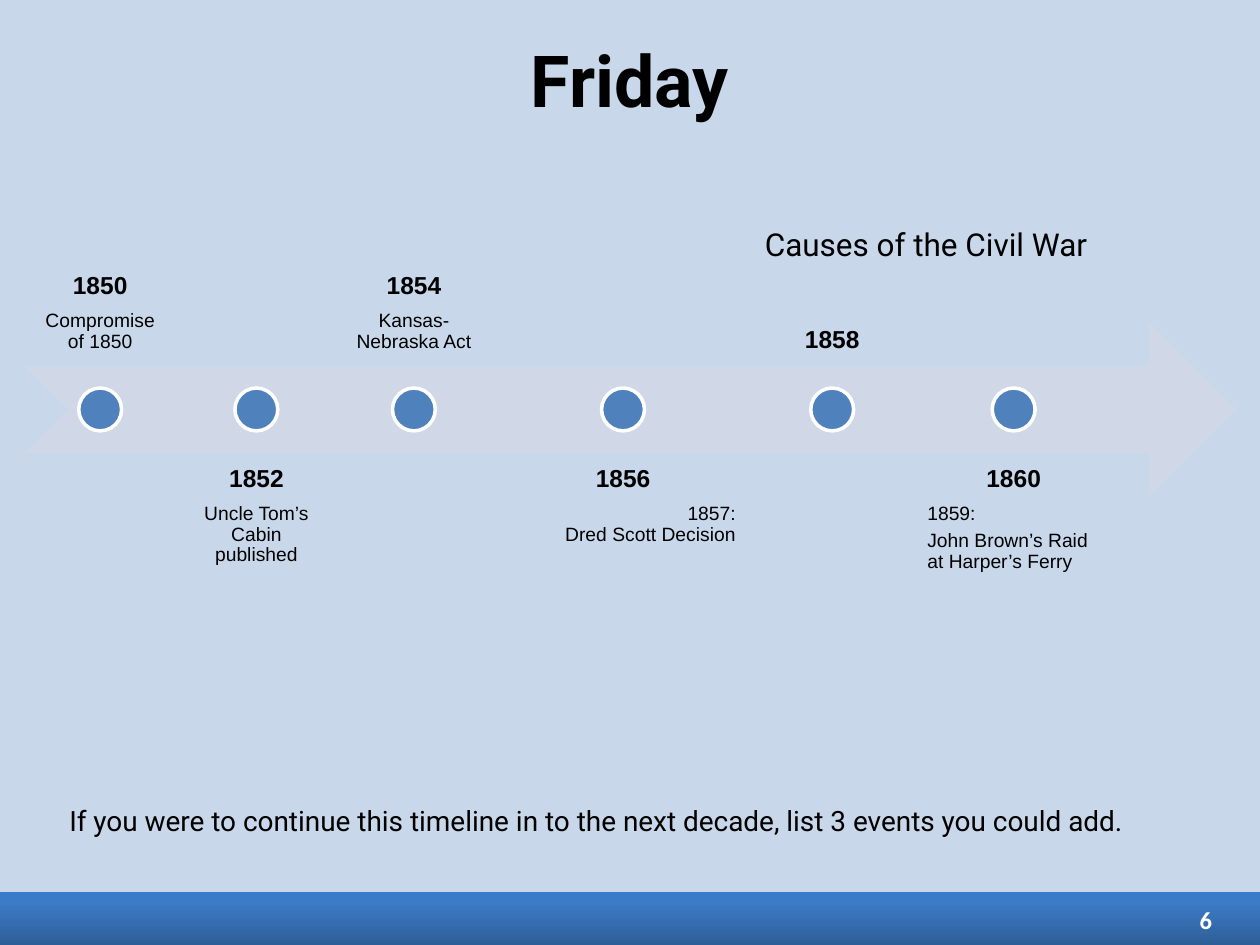
from dataclasses import dataclass

from pptx import Presentation
from pptx.dml.color import RGBColor
from pptx.enum import shapes, text
from pptx.util import Inches, Pt

BACKGROUND = RGBColor(0xC8, 0xD8, 0xEA)
BLACK = RGBColor(0, 0, 0)
WHITE = RGBColor(0xFF, 0xFF, 0xFF)
DOT_BLUE = RGBColor(0x4F, 0x81, 0xBD)
ARROW_GREY = RGBColor(0xD0, 0xD8, 0xE8)
FOOTER_DARK = RGBColor(0x2E, 0x5E, 0x97)
FOOTER_LIGHT = RGBColor(0x3C, 0x7B, 0xC7)

LEFT, CENTER, RIGHT = text.PP_ALIGN.LEFT, text.PP_ALIGN.CENTER, text.PP_ALIGN.RIGHT
TOP, MIDDLE, BOTTOM = text.MSO_ANCHOR.TOP, text.MSO_ANCHOR.MIDDLE, text.MSO_ANCHOR.BOTTOM

ABOVE_TOP, BELOW_TOP, LABEL_HEIGHT = 1.53, 3.59, 1.38
DOT_SIZE, DOT_TOP = 0.34, 3.08


@dataclass(frozen=True)
class Line:
    words: str
    size: float
    font: str = "Arial"
    bold: bool = False
    align: text.PP_ALIGN = CENTER
    color: RGBColor = BLACK
    spacing: float = 1.0
    after: float = 0


@dataclass(frozen=True)
class Event:
    year: str
    left: float
    details: tuple[str, ...] = ()
    width: float = 1.19
    align: text.PP_ALIGN = CENTER


EVENTS = [
    Event("1850", 0.2, ("Compromise of 1850",)),
    Event("1852", 1.44, ("Uncle Tom’s Cabin published",)),
    Event("1854", 2.69, ("Kansas-Nebraska Act",)),
    Event("1856", 3.94, ("1857:\vDred Scott Decision",), 2.01, RIGHT),
    Event("1858", 6.01),
    Event("1860", 7.25, ("1859:", "John Brown’s Raid at Harper’s Ferry"), 1.59, LEFT),
]


def add_text(page, left: float, top: float, width: float, height: float,
             lines: list[Line], anchor=TOP, inset: float = 0.05, wrap: bool = True) -> None:
    box = page.shapes.add_textbox(Inches(left), Inches(top), Inches(width), Inches(height))
    frame = box.text_frame
    frame.word_wrap = wrap
    frame.vertical_anchor = anchor
    frame.margin_left = frame.margin_right = Inches(inset)
    frame.margin_top = frame.margin_bottom = Inches(inset)
    for index, line in enumerate(lines):
        para = frame.add_paragraph() if index else frame.paragraphs[0]
        para.text = line.words
        para.alignment = line.align
        para.line_spacing = line.spacing
        para.space_after = Pt(line.after)
        para.font.name = line.font
        para.font.size = Pt(line.size)
        para.font.bold = line.bold
        para.font.color.rgb = line.color


def add_plain_shape(page, kind, left: float, top: float, width: float, height: float):
    """Add a preset shape without outline or shadow."""
    shape = page.shapes.add_shape(kind, Inches(left), Inches(top), Inches(width), Inches(height))
    shape.shadow.inherit = False
    shape.line.fill.background()
    return shape


def add_footer(page) -> None:
    bar = add_plain_shape(page, shapes.MSO_SHAPE.RECTANGLE, 0, 7.08, 10, 0.42)
    bar.fill.gradient()
    bar.fill.gradient_angle = 90
    for stop, color, position in zip(bar.fill.gradient_stops,
                                     (FOOTER_DARK, FOOTER_LIGHT), (0, 0.8)):
        stop.color.rgb = color
        stop.position = position
    number = Line("6", 14, "Calibri", True, RIGHT, WHITE)
    add_text(page, 9.44, 7.14, 0.23, 0.32, [number], MIDDLE, wrap=False)


def add_event(page, event: Event, above: bool) -> None:
    lines = [Line(event.year, 14, bold=True, spacing=0.9, after=6.3)]
    lines += [Line(detail, 11, align=event.align, spacing=0.9, after=3.85)
              for detail in event.details]
    add_text(page, event.left, ABOVE_TOP if above else BELOW_TOP, event.width, LABEL_HEIGHT,
             lines, BOTTOM if above else TOP, inset=0.11)
    dot_left = event.left + (event.width - DOT_SIZE) / 2
    dot = add_plain_shape(page, shapes.MSO_SHAPE.OVAL, dot_left, DOT_TOP, DOT_SIZE, DOT_SIZE)
    dot.fill.solid()
    dot.fill.fore_color.rgb = DOT_BLUE
    dot.line.color.rgb = WHITE
    dot.line.width = Pt(2)


def main() -> None:
    deck = Presentation()
    deck.slide_width, deck.slide_height = Inches(10), Inches(7.5)
    page = deck.slides.add_slide(deck.slide_layouts[6])
    page.background.fill.solid()
    page.background.fill.fore_color.rgb = BACKGROUND

    add_footer(page)
    add_text(page, 0.5, 0, 9, 1.25, [Line("Friday", 41, "Roboto", True)], MIDDLE)
    question = ("If you were to continue this timeline in to the next decade, "
                "list 3 events you could add.")
    add_text(page, 0.5, 6.33, 9, 0.72, [Line(question, 16, "Roboto", align=LEFT)])

    arrow = add_plain_shape(page, shapes.MSO_SHAPE.NOTCHED_RIGHT_ARROW, 0.2, 2.56, 9.61, 1.38)
    arrow.fill.solid()
    arrow.fill.fore_color.rgb = ARROW_GREY
    for index, event in enumerate(EVENTS):
        add_event(page, event, above=index % 2 == 0)

    heading = Line("Causes of the Civil War", 18, "Roboto", align=LEFT)
    add_text(page, 6.02, 1.74, 2.7, 0.4, [heading], wrap=False)
    deck.save("out.pptx")


if __name__ == "__main__":
    main()
